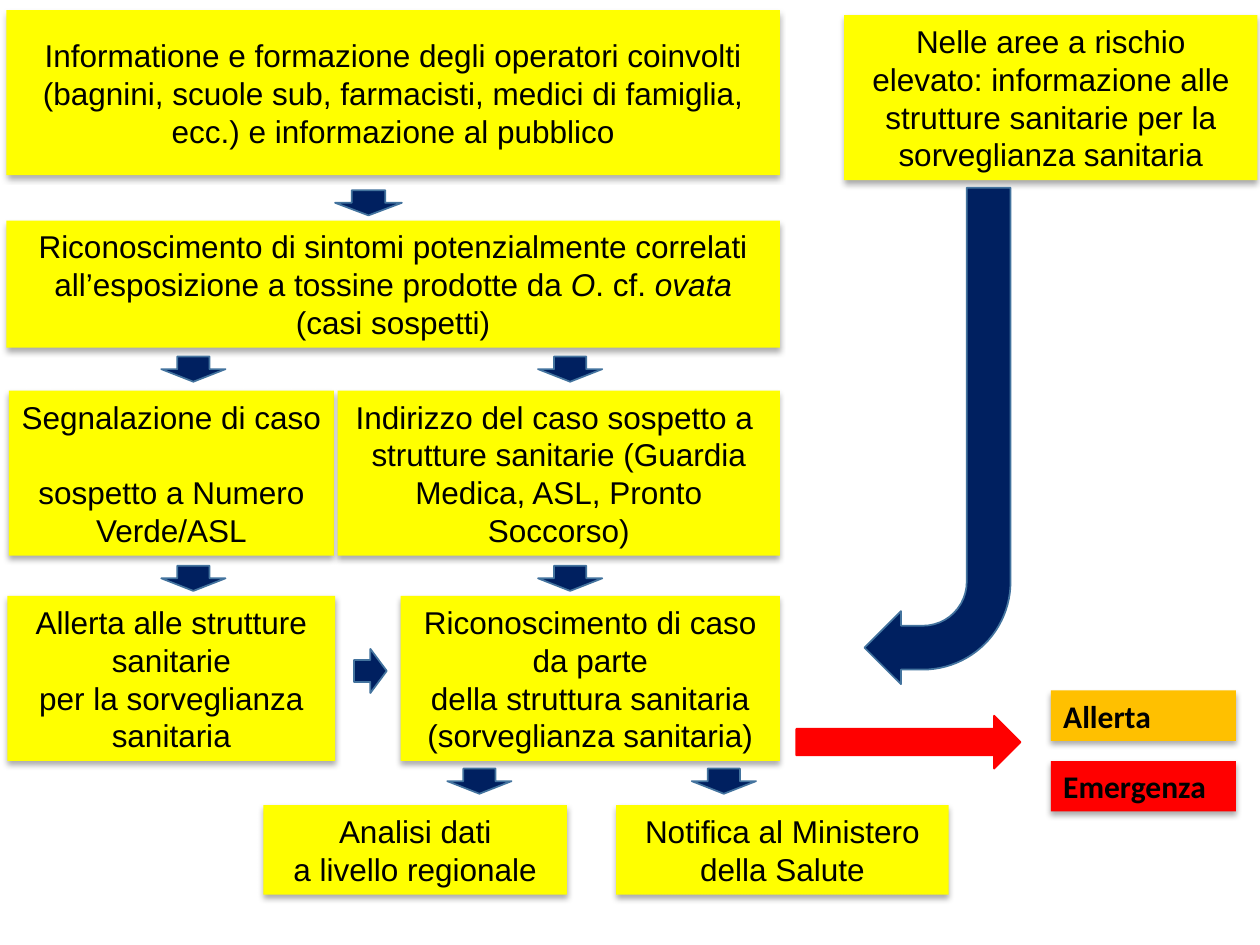
from lxml import etree
from pptx import Presentation
from pptx.dml.color import RGBColor
from pptx.enum.shapes import MSO_SHAPE
from pptx.enum.text import MSO_ANCHOR, MSO_AUTO_SIZE, PP_ALIGN
from pptx.oxml.ns import qn
from pptx.util import Pt

RECTANGLE = MSO_SHAPE.RECTANGLE
DOWN = MSO_SHAPE.DOWN_ARROW
RIGHT = MSO_SHAPE.RIGHT_ARROW
BENT = MSO_SHAPE.BENT_ARROW
CENTER, LEFT = PP_ALIGN.CENTER, PP_ALIGN.LEFT
MIDDLE, TOP = MSO_ANCHOR.MIDDLE, MSO_ANCHOR.TOP
GROW, FIXED = MSO_AUTO_SIZE.SHAPE_TO_FIT_TEXT, MSO_AUTO_SIZE.NONE

EMU_PER_PX = 9144
YELLOW, RED, ORANGE = "FFFF00", "FF0000", "FFC000"
NAVY, STEEL, BLACK = "002060", "43739E", "000000"


def color(value):
    """Turn a hex string into a colour."""
    return RGBColor.from_string(value)


class FlowSlide:
    """Draws the boxes and arrows of a flow chart on one slide."""

    def __init__(self, deck):
        self.slide = deck.slides.add_slide(deck.slide_layouts[6])

    def shape(self, kind, place, fill):
        """Add a filled preset shape without shadow."""
        shape = self.slide.shapes.add_shape(kind, *(px * EMU_PER_PX for px in place))
        shape.shadow.inherit = False
        shape.fill.solid()
        shape.fill.fore_color.rgb = color(fill)
        return shape

    def shadow(self, shape):
        """Give a shape a soft shadow below it."""
        effects = shape.element.spPr.find(qn("a:effectLst"))
        outer = etree.SubElement(
            effects, qn("a:outerShdw"), blurRad=str(Pt(3.5)), dist=str(Pt(2.2)),
            dir="5400000", algn="t", rotWithShape="0")
        tint = etree.SubElement(outer, qn("a:srgbClr"), val=BLACK)
        etree.SubElement(tint, qn("a:alpha"), val="32000")

    def box(self, place, text, fill=YELLOW, font="Arial", bold=False,
            align=CENTER, anchor=MIDDLE, size=GROW):
        """Add a shadowed text box; asterisks enclose italic spans."""
        box = self.shape(RECTANGLE, place, fill)
        box.line.fill.background()
        self.shadow(box)
        frame = box.text_frame
        frame.word_wrap = True
        frame.auto_size = size
        frame.vertical_anchor = anchor
        for index, line in enumerate(text.split("\n")):
            para = frame.add_paragraph() if index else frame.paragraphs[0]
            para.alignment = align
            para.font.name, para.font.size, para.font.bold = font, Pt(18), bold
            para.font.color.rgb = color(BLACK)
            for part, words in enumerate(line.split("*")):
                if part % 2:
                    span = para.add_run()
                    span.text = words
                    span.font.italic = True
                elif "\v" in words:
                    before, after = words.split("\v")
                    para.add_run().text = before
                    para.add_line_break()
                    para.add_run().text = after
                else:
                    para.add_run().text = words

    def arrow(self, kind, place, fill=NAVY, line=STEEL):
        """Add an outlined block arrow."""
        arrow = self.shape(kind, place, fill)
        arrow.line.color.rgb = color(line)
        arrow.line.width = Pt(1)
        return arrow

    def label(self, top, text, fill):
        """Add a bold alert level label."""
        self.box((834, top, 147, 40), text, fill, "Calibri", True, LEFT, TOP)


def main():
    """Build the surveillance flow chart."""
    deck = Presentation()
    deck.slide_width, deck.slide_height = 1000 * EMU_PER_PX, 750 * EMU_PER_PX
    flow = FlowSlide(deck)

    flow.box((5, 8, 614, 131),
             "Informatione e formazione degli operatori coinvolti (bagnini, scuole sub, "
             "farmacisti, medici di famiglia, ecc.) e informazione al pubblico", size=FIXED)
    boxes = [
        ((670, 12, 328, 131), "Nelle aree a rischio elevato: informazione alle "
                              "strutture sanitarie per la sorveglianza sanitaria"),
        ((5, 175, 614, 101), "Riconoscimento di sintomi potenzialmente correlati "
                             "all’esposizione a tossine prodotte da *O*. cf. *ovata* "
                             "(casi sospetti)"),
        ((7, 310, 258, 131), "Segnalazione di caso \vsospetto a Numero Verde/ASL"),
        ((268, 310, 351, 131), "Indirizzo del caso sospetto a \nstrutture sanitarie "
                               "(Guardia Medica, ASL, Pronto Soccorso)"),
        ((6, 473, 260, 131), "Allerta alle strutture sanitarie\n"
                             "per la sorveglianza sanitaria"),
        ((318, 473, 301, 131), "Riconoscimento di caso da parte\n"
                               "della struttura sanitaria\n(sorveglianza sanitaria)"),
        ((209, 639, 241, 71), "Analisi dati\na livello regionale"),
        ((489, 639, 264, 71), "Notifica al Ministero\ndella Salute"),
    ]
    for place, text in boxes:
        flow.box(place, text)

    flow.arrow(DOWN, (266, 151, 53, 20))
    for top, lefts in ((283, (128, 427)), (449, (128, 427)), (610, (355, 549))):
        for left in lefts:
            flow.arrow(DOWN, (left, top, 51, 20))
    flow.arrow(RIGHT, (281, 515, 26, 35))
    bend = flow.arrow(BENT, (686, 149, 116, 394))
    bend.rotation = 180
    for index, value in enumerate((0.3, 0.25, 0.25, 0.6)):
        bend.adjustments[index] = value
    flow.arrow(RIGHT, (632, 568, 178, 42), RED, RED)

    flow.label(604, "Emergenza", RED)
    flow.label(548, "Allerta", ORANGE)
    deck.save("out.pptx")


if __name__ == "__main__":
    main()
